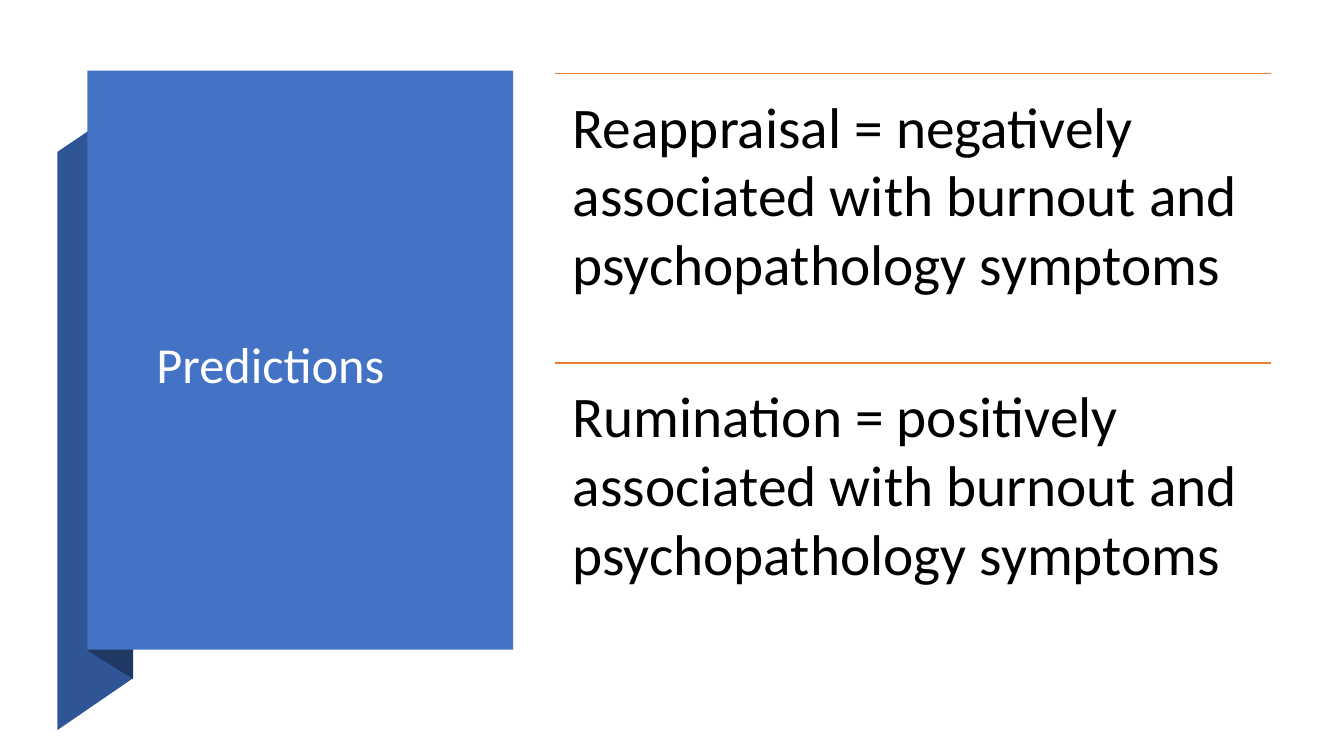
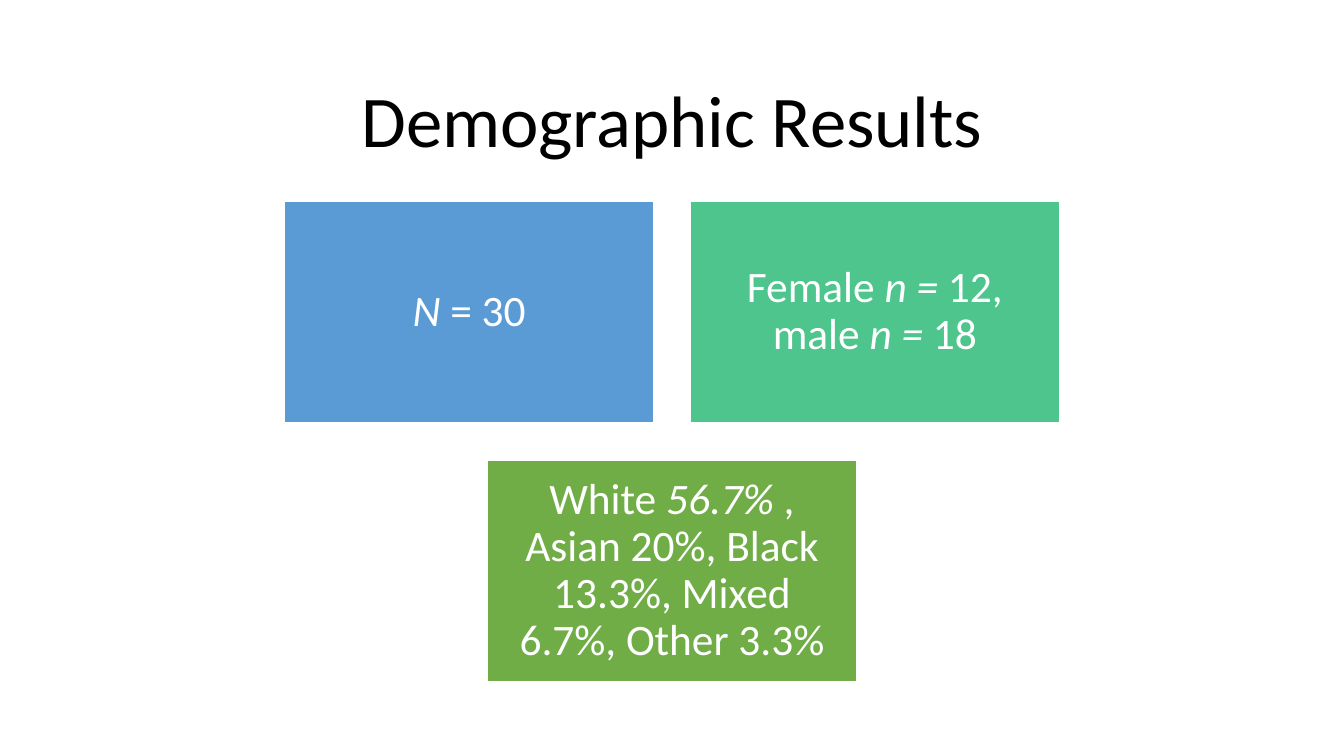
from lxml import etree
from pptx import Presentation
from pptx.dml.color import RGBColor
from pptx.enum.shapes import MSO_CONNECTOR, MSO_SHAPE
from pptx.enum.text import MSO_ANCHOR, MSO_AUTO_SIZE, PP_ALIGN
from pptx.oxml.ns import qn
from pptx.util import Pt

# Content: a text is a list of (words, italic) spans
PREDICTIONS_TITLE = "Predictions"
PREDICTIONS = [
    "Reappraisal = negatively associated with burnout and psychopathology symptoms",
    "Rumination = positively associated with burnout and psychopathology symptoms",
]
RESULTS_TITLE = "Demographic Results"
RESULT_ROWS = [
    [
        ("5B9BD5", [("N", True), (" = 30", False)]),
        ("4DC58D", [("Female ", False), ("n =", True), (" 12, male ", False),
                    ("n =", True), (" 18", False)]),
    ],
    [
        ("70AD47", [("White ", False), ("56.7%", True),
                    (" , Asian 20%, Black 13.3%, Mixed 6.7%, Other 3.3%", False)]),
    ],
]

# Shared style
FONT = "Calibri"
WHITE, BLACK = "FFFFFF", "000000"
BLUE, ORANGE = "4472C4", "ED7D31"
LEFT, CENTER = PP_ALIGN.LEFT, PP_ALIGN.CENTER
TOP, MIDDLE = MSO_ANCHOR.TOP, MSO_ANCHOR.MIDDLE
NO_FIT = MSO_AUTO_SIZE.NONE
RECTANGLE, STRAIGHT = MSO_SHAPE.RECTANGLE, MSO_CONNECTOR.STRAIGHT
PAGE_WIDTH, PAGE_HEIGHT = 960, 540

# Folded ribbon behind the title panel: colour and outline, back to front
RIBBON = [
    ("2F5597", [(41, 521.5), (95, 484.5), (95, 72), (41, 108.5)]),
    ("203864", [(63, 465), (95, 485), (95, 71.5), (63, 50.5)]),
]
PANEL = (62.5, 50.5, 304, 413.5)

# Ruled list
LIST_LEFT, LIST_TOP, LIST_WIDTH, ITEM_HEIGHT = 396.75, 52.5, 511, 206.75

# Result boxes
BOX_WIDTH, BOX_HEIGHT, BOX_GAP, BOX_TOP = 263.5, 158.25, 26.35, 144


def color(value):
    return RGBColor.from_string(value)


def points(lengths):
    return [Pt(length) for length in lengths]


def write(shape, spans, size, ink=WHITE, align=LEFT, anchor=MIDDLE,
          spacing=0.9, inset=(7.2, 3.6)):
    frame = shape.text_frame
    frame.word_wrap = True
    frame.auto_size = NO_FIT
    frame.vertical_anchor = anchor
    frame.margin_left = frame.margin_right = Pt(inset[0])
    frame.margin_top = frame.margin_bottom = Pt(inset[1])
    para = frame.paragraphs[0]
    para.alignment = align
    para.line_spacing = spacing
    for words, italic in spans:
        span = para.add_run()
        span.text = words
        span.font.name = FONT
        span.font.size = Pt(size)
        span.font.italic = italic
        span.font.color.rgb = color(ink)


def paint(shape, fill, line=None):
    shape.shadow.inherit = False
    shape.fill.solid()
    shape.fill.fore_color.rgb = color(fill)
    if line:
        shape.line.color.rgb = color(line)
        shape.line.width = Pt(1)
    else:
        shape.line.fill.background()


def add_title(page, text, place, size, **style):
    title = page.shapes.title
    title.left, title.top, title.width, title.height = points(place)
    write(title, [(text, False)], size, **style)
    # Bring the title in front of what is drawn so far
    title.element.getparent().append(title.element)


def add_rectangle(page, place, fill, line=None):
    box = page.shapes.add_shape(RECTANGLE, *points(place))
    paint(box, fill, line)
    return box


def add_rule(page, left, top, width):
    rule = page.shapes.add_connector(STRAIGHT, *points((left, top, left + width, top)))
    rule.line.color.rgb = color(ORANGE)
    rule.line.width = Pt(1)
    etree.SubElement(rule.element.spPr, qn("a:effectLst"))


def build_predictions(page):
    # Ribbon, panel and title
    for fill, outline in RIBBON:
        start, *rest = [points(corner) for corner in outline]
        builder = page.shapes.build_freeform(*start)
        builder.add_line_segments(rest, close=True)
        paint(builder.convert_to_shape(), fill)
    add_rectangle(page, PANEL, BLUE)
    add_title(page, PREDICTIONS_TITLE, (104.5, 120.5, 216.5, 283.5), 36)

    # One rule above each statement
    for index, statement in enumerate(PREDICTIONS):
        top = LIST_TOP + index * ITEM_HEIGHT
        add_rule(page, LIST_LEFT, top, LIST_WIDTH)
        box = page.shapes.add_textbox(*points((LIST_LEFT, top, LIST_WIDTH, ITEM_HEIGHT)))
        write(box, [(statement, False)], 41, ink=BLACK, anchor=TOP,
              spacing=1.0, inset=(12.3, 12.3))


def build_results(page):
    add_title(page, RESULTS_TITLE, (66, 44, 828, 89.5), 52, ink=BLACK, align=CENTER)

    # Each row of boxes is centred on the page
    for row_index, row in enumerate(RESULT_ROWS):
        row_width = len(row) * (BOX_WIDTH + BOX_GAP) - BOX_GAP
        row_left = (PAGE_WIDTH - row_width) / 2
        top = BOX_TOP + row_index * (BOX_HEIGHT + BOX_GAP)
        for index, (fill, spans) in enumerate(row):
            left = row_left + index * (BOX_WIDTH + BOX_GAP)
            box = add_rectangle(page, (left, top, BOX_WIDTH, BOX_HEIGHT), fill, WHITE)
            write(box, spans, 31, align=CENTER, inset=(9.3, 9.3))


def main():
    deck = Presentation()
    deck.slide_width, deck.slide_height = points((PAGE_WIDTH, PAGE_HEIGHT))
    title_only = deck.slide_layouts.get_by_name("Title Only")
    for build in (build_predictions, build_results):
        build(deck.slides.add_slide(title_only))
    deck.save("out.pptx")


if __name__ == "__main__":
    main()
